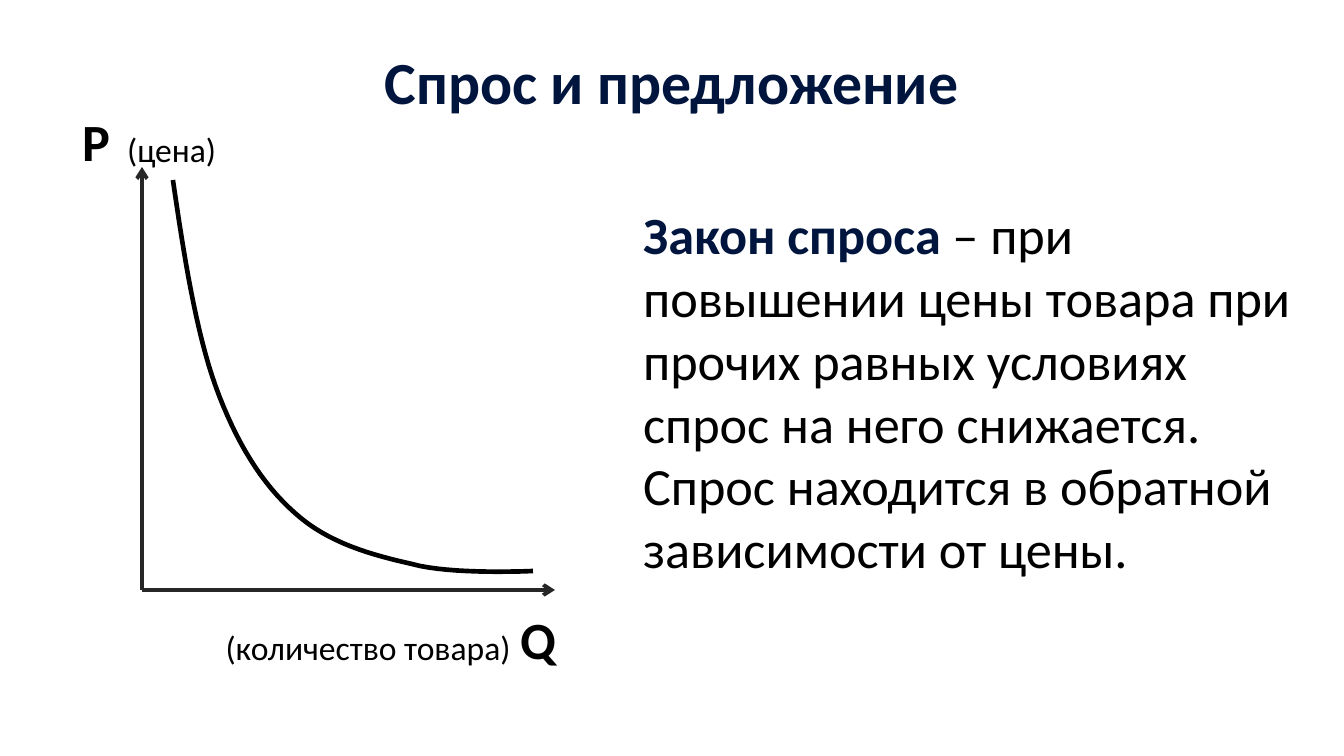
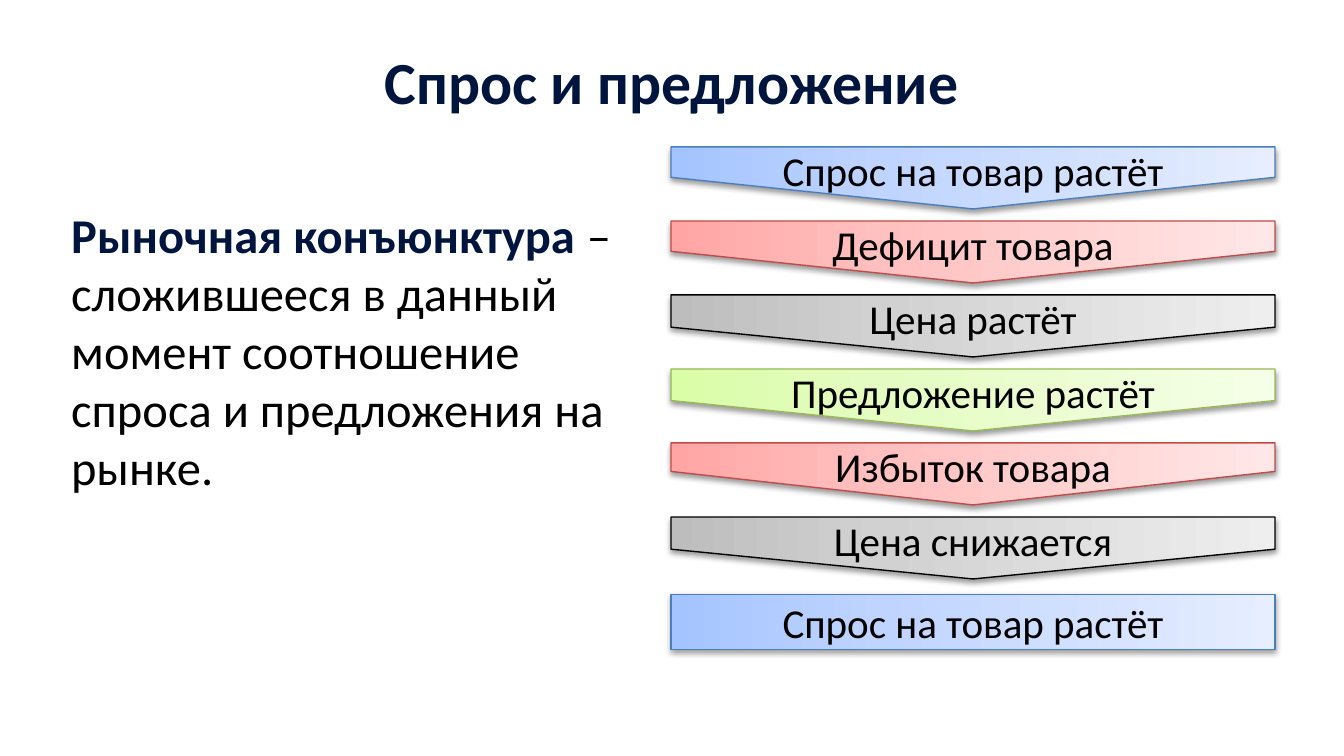
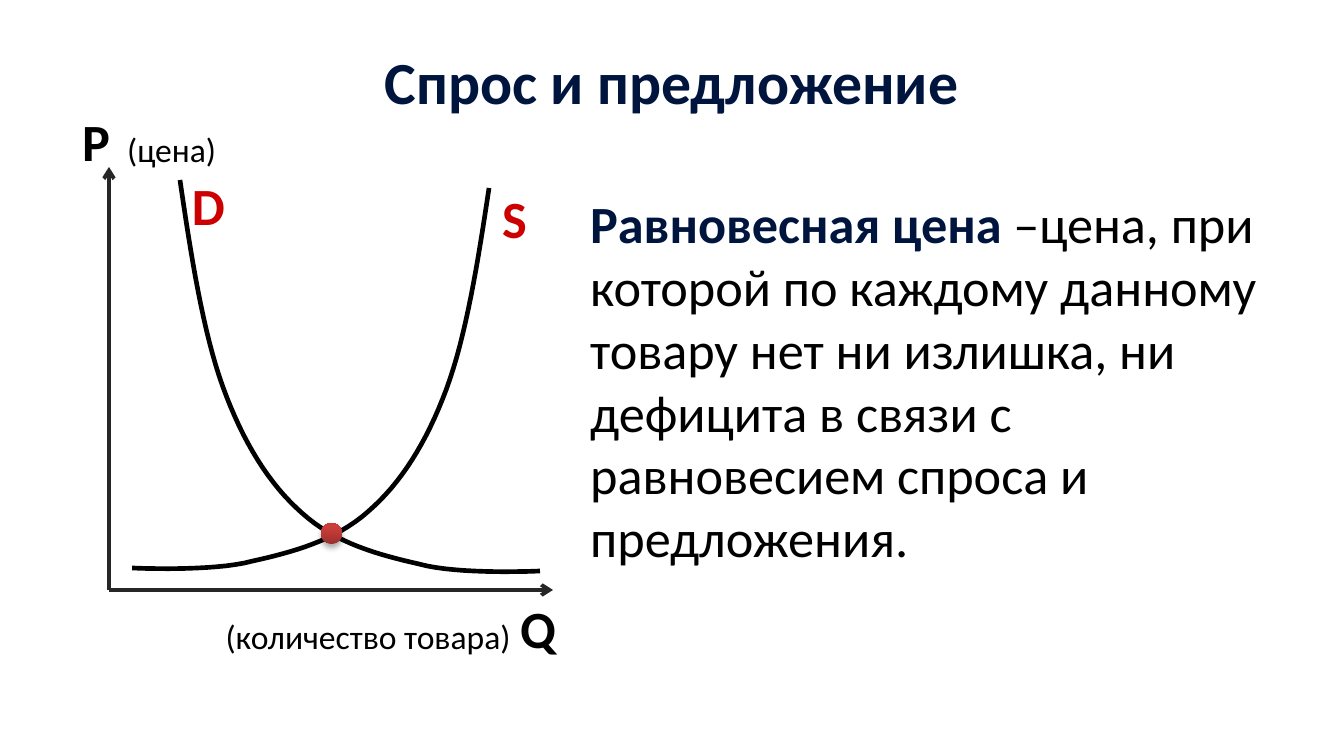
"""Build three slides on demand, supply and the price where they meet."""
import copy

import pptx
import pptx.dml.color
import pptx.enum.shapes
import pptx.enum.text
import pptx.oxml
import pptx.oxml.ns
import pptx.util

SCALE = 914400 / 134.4
SIZE = (1344, 756)
FONT = "Calibri"
INK = {"navy": "00153E", "black": "000000", "axis": "262626", "red": "CC0000"}
ALIGN = pptx.enum.text.PP_ALIGN
KIND = pptx.enum.shapes.MSO_SHAPE

TITLE = "Спрос и предложение"
TITLE_BOX = (355, 38, 634, 86)

LAW = [
    [("Закон спроса ", "navy", True),
     ("– при повышении цены товара при прочих равных условиях спрос на него снижается.", "black", False)],
    [("Спрос находится в обратной зависимости от цены.", "black", False)],
]
MARKET = [
    [("Рыночная конъюнктура ", "navy", True),
     ("– сложившееся в данный момент соотношение спроса и предложения на рынке.", "black", False)],
]
BALANCE = [
    [("Равновесная цена ", "navy", True),
     ("–цена, при которой по каждому данному товару нет ни излишка, ни дефицита "
      "в связи с равновесием спроса и предложения.", "black", False)],
]

TINTS = {
    "blue": ("4B7EBC", ["A4C4FF", "BFD4FF", "E6EEFF"]),
    "pink": ("BF4C48", ["FFA6A5", "FFC0BF", "FFE7E7"]),
    "gray": ("000000", ["BDBDBD", "D1D1D1", "EEEEEE"]),
    "green": ("98B955", ["DAFDA7", "E4FCC2", "F5FFE7"]),
}
DOT = ["9C2F2D", "CB3E3A", "CE3B37"]
STEPS = [
    ("Спрос на товар растёт", "blue", 0.51, 62),
    ("Дефицит товара", "pink", 0.51, 62),
    ("Цена растёт", "gray", 0.48, 62),
    ("Предложение растёт", "green", 0.49, 62),
    ("Избыток товара", "pink", 0.54, 62),
    ("Цена снижается", "gray", 0.48, 62),
    ("Спрос на товар растёт", "blue", 0, 55),
]
STEP_MID, STEP_TOP, STEP_GAP, STEP_WIDE = 973, 178, 74, 604

BEND = [(0, 0), (11, 75), (23, 152), (43, 207), (63, 262), (89, 304), (122, 333),
        (155, 363), (199, 375), (239, 384), (278, 395), (360, 391)]
BEND += [BEND[-1]]
CUTS = 16


def px(num):
    return pptx.util.Emu(round(num * SCALE))


def rgb(code):
    return pptx.dml.color.RGBColor.from_string(code)


def style(font, size, ink, bold=False):
    font.name, font.size, font.bold = FONT, pptx.util.Pt(size), bold
    font.color.rgb = rgb(INK[ink])


def frame(host, box):
    text = host.add_textbox(*map(px, box)).text_frame
    text.word_wrap = True
    text.auto_size = pptx.enum.text.MSO_AUTO_SIZE.SHAPE_TO_FIT_TEXT
    return text


def label(host, box, words, size, ink="black", bold=False, align=ALIGN.LEFT):
    para = frame(host, box).paragraphs[0]
    para.text, para.alignment = words, align
    style(para.font, size, ink, bold)


def prose(slide, box, paras, size):
    text = frame(slide.shapes, box)
    for num, parts in enumerate(paras):
        para = text.add_paragraph() if num else text.paragraphs[0]
        for words, ink, bold in parts:
            run = para.add_run()
            run.text = words
            style(run.font, size, ink, bold)


def axes(slide, left, right, drop):
    base, top = 590, 167
    group = slide.shapes.add_group_shape().shapes
    for end in ((left, top), (right, base)):
        line = group.add_connector(
            pptx.enum.shapes.MSO_CONNECTOR.STRAIGHT, *map(px, (left, base, *end)))
        line.line.color.rgb = rgb(INK["axis"])
        line.line.width = pptx.util.Pt(2)
        props = line.element.spPr
        tail = pptx.oxml.parse_xml(f'<a:tailEnd {pptx.oxml.ns.nsdecls("a")} type="arrow"/>')
        props.find(pptx.oxml.ns.qn("a:ln")).append(tail)
        props.append(pptx.oxml.parse_xml(f'<a:effectLst {pptx.oxml.ns.nsdecls("a")}/>'))
    price = slide.shapes.add_group_shape().shapes
    label(price, (69, 103, 42, 77), "Р", 28, bold=True)
    label(price, (114, 122, 148, 54), "(цена)", 18)
    count = slide.shapes.add_group_shape().shapes
    label(count, (507, base + drop, 42, 77), "Q", 28, bold=True)
    label(count, (184, base + drop + 19, 340, 54), "(количество товара)", 18, align=ALIGN.RIGHT)


def curve(slide, left, top, wide=360, high=391):
    last = BEND[-1]
    spots = [(left + x * wide / last[0], top + y * high / last[1]) for x, y in BEND]
    dots = [spots[0]]
    for num in range(0, len(spots) - 3, 3):
        for cut in range(1, CUTS + 1):
            t = cut / CUTS
            mix = ((1 - t) ** 3, 3 * t * (1 - t) ** 2, 3 * t * t * (1 - t), t ** 3)
            dots.append(tuple(sum(m * s[k] for m, s in zip(mix, spots[num:num + 4]))
                              for k in (0, 1)))
    path = [(px(x), px(y)) for x, y in dots]
    pen = slide.shapes.build_freeform(*path[0])
    pen.add_line_segments(path[1:], close=False)
    shape = pen.convert_to_shape()
    shape.shadow.inherit = False
    shape.fill.background()
    shape.line.color.rgb = rgb(INK["black"])
    shape.line.width = pptx.util.Pt(2.5)


def glow(shape, codes, middle, dist, alpha):
    shape.fill.gradient()
    shape.fill.gradient_angle = 90
    stops = shape.element.spPr.find(".//" + pptx.oxml.ns.qn("a:gsLst"))
    stops.insert(1, copy.deepcopy(stops[0]))
    for stop, code, place in zip(shape.fill.gradient_stops, codes, (0, middle, 1)):
        stop.color.rgb, stop.position = rgb(code), place
    for stop in stops:
        for tweak in list(stop[0]):
            stop[0].remove(tweak)
    shape.shadow.inherit = False
    shape.element.spPr.find(pptx.oxml.ns.qn("a:effectLst")).append(pptx.oxml.parse_xml(
        f'<a:outerShdw {pptx.oxml.ns.nsdecls("a")} blurRad="40000" dist="{dist}" '
        f'dir="5400000" rotWithShape="0"><a:srgbClr val="{INK["black"]}">'
        f'<a:alpha val="{alpha}"/></a:srgbClr></a:outerShdw>'))


def steps(slide):
    for num, (words, tint, notch, high) in enumerate(STEPS):
        mid = STEP_TOP + num * STEP_GAP
        box = (STEP_MID - high / 2, mid - STEP_WIDE / 2, high, STEP_WIDE)
        shape = slide.shapes.add_shape(KIND.PENTAGON, *map(px, box))
        shape.rotation = 90
        shape.adjustments[0] = notch
        edge, codes = TINTS[tint]
        shape.line.color.rgb = rgb(edge)
        shape.line.width = pptx.util.Pt(0.75)
        glow(shape, codes, 0.35, 20000, 38000)
        text = shape.text_frame
        text.vertical_anchor = pptx.enum.text.MSO_ANCHOR.MIDDLE
        shape.element.txBody.bodyPr.set("vert", "vert270")
        para = text.paragraphs[0]
        para.text, para.alignment = words, ALIGN.CENTER
        style(para.font, 22, "black")


def main():
    deck = pptx.Presentation()
    deck.slide_width, deck.slide_height = map(px, SIZE)

    def page():
        slide = deck.slides.add_slide(deck.slide_layouts[6])
        label(slide.shapes, TITLE_BOX, TITLE, 32, "navy", True, ALIGN.CENTER)
        return slide

    slide = page()
    prose(slide, (630, 196, 677, 394), LAW, 28)
    axes(slide, 142, 555, 11)
    curve(slide, 173, 180)

    slide = page()
    prose(slide, (58, 198, 571, 308), MARKET, 26)
    steps(slide)

    slide = page()
    axes(slide, 109, 553, 0)
    curve(slide, 180, 180)
    curve(slide, 489, 188, -357, 380)
    prose(slide, (577, 185, 718, 394), BALANCE, 28)
    for words, left, top in (("D", 175, 167), ("S", 481, 180)):
        label(slide.shapes, (left, top, 67, 77), words, 28, "red", True, ALIGN.CENTER)
    dot = slide.shapes.add_shape(KIND.OVAL, *map(px, (321, 523, 21, 21)))
    dot.line.fill.background()
    glow(dot, DOT, 0.8, 23000, 35000)

    deck.save("out.pptx")


if __name__ == "__main__":
    main()
